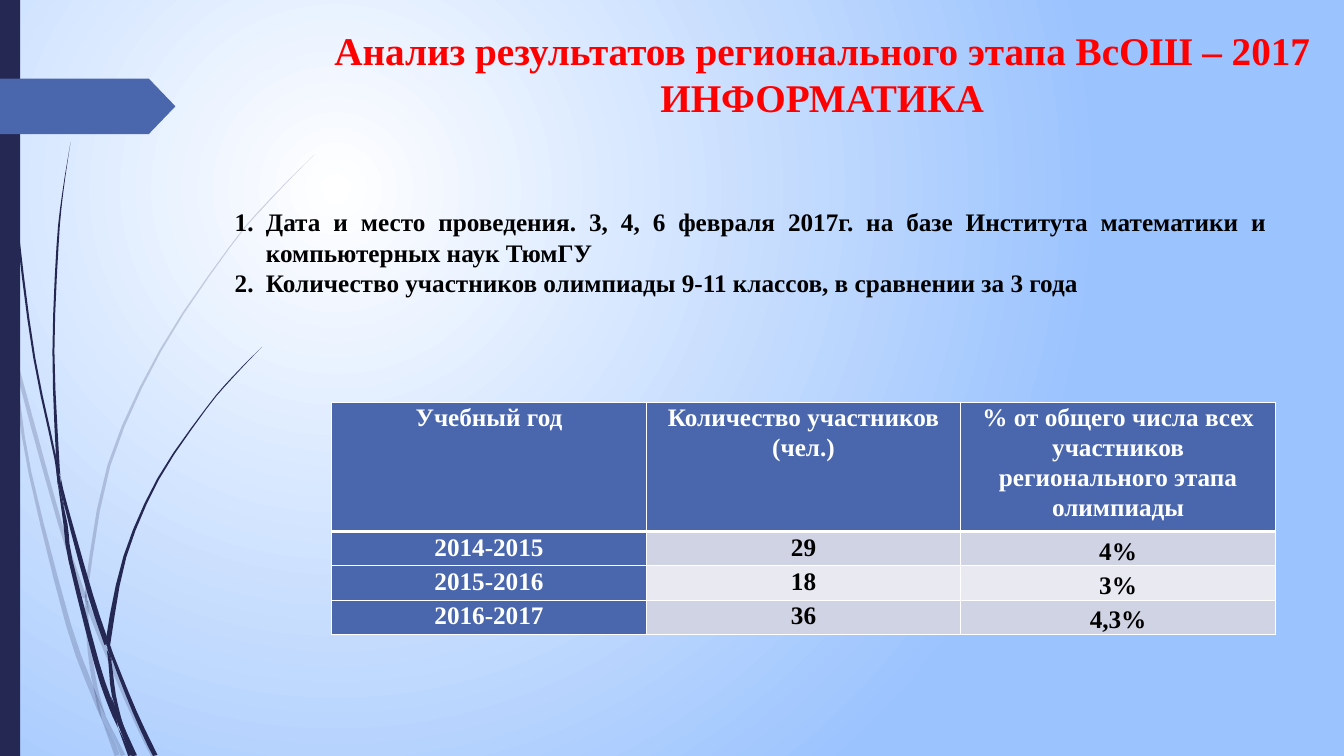
import math

import pptx
import pptx.dml.color
import pptx.enum.shapes
import pptx.enum.text
import pptx.oxml
import pptx.oxml.ns
import pptx.util

TITLE = ["Анализ результатов регионального этапа ВсОШ – 2017", "ИНФОРМАТИКА"]
POINTS = [
    "Дата и место проведения. 3, 4, 6 февраля 2017г. на базе Института "
    "математики и компьютерных наук ТюмГУ",
    "Количество участников олимпиады 9-11 классов, в сравнении за 3 года",
]
TABLE = [
    ["Учебный год", "Количество участников\n(чел.)",
     "% от общего числа всех участников регионального этапа\nолимпиады"],
    ["2014-2015", "29", "4%"],
    ["2015-2016", "18", "3%"],
    ["2016-2017", "36", "4,3%"],
]
# Each blade of grass runs through points (x, y, thickness) in inches.
PALE_BLADES = [
    [(0, 2.9, .05), (.06, 3.22, .03), (.11, 3.5, 0)],
    [(.14, 3.45, 0), (.22, 3.83, .04), (.6, 5.21, .04), (.84, 5.93, .04)],
    [(.88, 5.96, 0), (.9, 6.08, .04), (1.25, 6.93, .04), (1.52, 7.5, .05)],
    [(1.05, 7.11, 0), (1.22, 7.5, .05)],
    [(.11, 3.5, 0), (.16, 3.8, .03), (.3, 4.7, .03), (.68, 6.2, .05),
     (.93, 6.89, .05), (1.01, 7.14, 0)],
    [(.84, 5.99, 0), (.86, 6.1, .03), (.89, 6.46, .04), (.95, 6.83, .04),
     (1.05, 7.11, 0)],
    [(3.12, 1.53, 0), (2.68, 1.98, .01), (2.28, 2.45, .01), (1.59, 3.48, .02),
     (1.08, 4.62, .03), (.86, 5.84, .03), (.88, 5.96, 0)],
    [(1.01, 7.14, 0), (1.16, 7.5, .05)],
    [(.85, 5.86, 0), (.86, 5.98, .03), (.88, 6.1, 0)],
    [(.93, 6.83, 0), (1.02, 7.1, .05), (1.19, 7.5, 0)],
]
DARK_BLADES = [
    [(.03, 0, .01), (.07, 1.1, .01), (.18, 2.33, .02), (.34, 3.55, .02),
     (.55, 4.55, .02), (.57, 4.81, 0)],
    [(.6, 4.72, 0), (.65, 5, .03), (.9, 5.91, .05), (1.06, 6.39, .05)],
    [(1.1, 6.41, 0), (1.12, 6.52, .03), (1.34, 7.07, .04), (1.54, 7.5, .05)],
    [(.57, 4.77, 0), (.65, 5.2, .04), (.7, 5.56, .04), (.96, 6.58, .05),
     (1.1, 7, .05), (1.17, 7.22, 0)],
    [(.7, 1.41, 0), (.62, 1.93, .01), (.57, 2.45, .02), (.53, 3.49, .02),
     (.57, 4.51, .03), (.6, 4.72, 0)],
    [(1.22, 7.19, 0), (1.34, 7.5, .04)],
    [(.55, 4.49, 0), (.58, 4.74, .03), (.64, 5.05, 0)],
    [(2.6, 3.44, 0), (2.31, 3.74, .01), (2.04, 4.06, .01), (1.57, 4.75, .02),
     (1.24, 5.52, .03), (1.08, 6.32, .05), (1.1, 6.41, 0)],
    [(1.17, 7.22, 0), (1.29, 7.5, .04)],
    [(1.06, 6.45, 0), (1.09, 6.56, .03), (1.13, 6.9, .04), (1.22, 7.19, 0)],
    [(1.06, 6.31, 0), (1.08, 6.43, .03), (1.11, 6.56, 0)],
    [(1.1, 6.91, 0), (1.19, 7.17, .05), (1.32, 7.5, .03)],
]
W, H = 13.33, 7.5
NAVY, BLUE, RED, WHITE, BLACK, SKY = (
    "242852", "4A66AC", "FF0000", "FFFFFF", "000000", "9BC3FE")
BANDS = ["D0D3E3", "E9EAF1"]
COL_W, HEAD_H, ROW_H = 3.12, 1.27, .34
FONT = "Times New Roman"
ALIGN = pptx.enum.text.PP_ALIGN
ANCHOR = pptx.enum.text.MSO_ANCHOR
SHAPE = pptx.enum.shapes.MSO_SHAPE
inch = pptx.util.Inches


def rgb(colour):
    return pptx.dml.color.RGBColor.from_string(colour)


def add_xml(parent, xml):
    head, rest = xml.split(" ", 1)
    parent.append(pptx.oxml.parse_xml(
        f"{head} {pptx.oxml.ns.nsdecls('a')} {rest}"))


def paint(shape, colour, alpha=None):
    shape.shadow.inherit = False
    shape.fill.solid()
    shape.fill.fore_color.rgb = rgb(colour)
    shape.line.fill.background()
    if alpha:
        solid = shape.fill.fore_color._xFill
        add_xml(solid[0], f'<a:alpha val="{alpha * 1000}"/>')


def write(tf, lines, size, colour, align, spacing=1.0):
    tf.text = "\n".join(lines)
    for p in tf.paragraphs:
        p.alignment, p.line_spacing = align, spacing
        p.space_before = p.space_after = pptx.util.Pt(0)
        for r in p.runs:
            r.font.name, r.font.size, r.font.bold = FONT, pptx.util.Pt(size), True
            r.font.color.rgb = rgb(colour)


def smooth(points, steps=3):
    """Catmull-Rom curve through the points, thickness included."""
    ends = [points[0], *points, points[-1]]
    curve = []
    for a, b, c, d in zip(ends, ends[1:], ends[2:], ends[3:]):
        for t in (i / steps for i in range(steps)):
            curve.append(tuple(
                .5 * (2 * q + (r - p) * t + (2 * p - 5 * q + 4 * r - s) * t ** 2
                      + (3 * q - p - 3 * r + s) * t ** 3)
                for p, q, r, s in zip(a, b, c, d)))
    return curve + [points[-1]]


def add_blade(s, points, alpha=None):
    curve = smooth(points) if len(points) > 2 else points
    left, right = [], []
    for i, (x, y, w) in enumerate(curve):
        before, after = curve[max(i - 1, 0)], curve[min(i + 1, len(curve) - 1)]
        dx, dy = after[0] - before[0], after[1] - before[1]
        k = w / 2 / math.hypot(dx, dy)
        for side, sign in ((left, 1), (right, -1)):
            side.append((inch(max(x + sign * dy * k, 0)),
                         inch(min(max(y - sign * dx * k, 0), H))))
    outline = left + right[::-1]
    builder = s.shapes.build_freeform(*outline[0])
    builder.add_line_segments(outline[1:], close=True)
    paint(builder.convert_to_shape(), NAVY, alpha)


def add_backdrop(s):
    fill = s.background.fill
    fill.gradient()
    for stop, colour in zip(fill.gradient_stops, (WHITE, SKY)):
        stop.color.rgb = rgb(colour)
    grad = s.background._cSld.find(".//" + pptx.oxml.ns.qn("a:gradFill"))
    grad.remove(grad.find(pptx.oxml.ns.qn("a:lin")))
    add_xml(grad, '<a:path path="circle"><a:fillToRect l="50000" t="50000" '
                  'r="100000" b="100000"/></a:path>')
    for blades, alpha in ((PALE_BLADES, 20), (DARK_BLADES, None)):
        for points in blades:
            add_blade(s, points, alpha)
    paint(s.shapes.add_shape(SHAPE.RECTANGLE, 0, 0, inch(.2), inch(H)), NAVY)
    pointer = s.shapes.add_shape(
        SHAPE.PENTAGON, 0, inch(.78), inch(1.74), inch(.55))
    pointer.adjustments[0] = .48
    paint(pointer, BLUE)


def add_title(s):
    title = s.shapes.title
    title.left, title.top, title.width, title.height = map(
        inch, (2.51, .21, 11.29, 1.04))
    tf = title.text_frame
    tf.auto_size = pptx.enum.text.MSO_AUTO_SIZE.NONE
    tf.vertical_anchor = ANCHOR.TOP
    write(tf, TITLE, 28, RED, ALIGN.CENTER)


def add_points(s):
    tf = s.shapes.add_textbox(
        *map(inch, (1.73, 2, 10.93, 1.01))).text_frame
    tf.word_wrap = True
    write(tf, POINTS, 18, BLACK, ALIGN.JUSTIFY)
    for p in tf.paragraphs:
        pPr = p._p.get_or_add_pPr()
        pPr.set("marL", str(inch(.81)))
        pPr.set("indent", str(inch(-.31)))
        add_xml(pPr, '<a:buFont typeface="+mj-lt"/>')
        add_xml(pPr, '<a:buAutoNum type="arabicPeriod"/>')


def add_results(s):
    rows, cols = len(TABLE), len(TABLE[0])
    table = s.shapes.add_table(
        rows, cols, inch(3.29), inch(3.99), inch(COL_W * cols),
        inch(HEAD_H + ROW_H * (rows - 1))).table
    for column in table.columns:
        column.width = inch(COL_W)
    for i, line in enumerate(TABLE):
        table.rows[i].height = inch(ROW_H if i else HEAD_H)
        for j, text in enumerate(line):
            cell = table.cell(i, j)
            header = i == 0 or j == 0
            write(cell.text_frame, text.split("\n"), 18,
                  WHITE if header else BLACK, ALIGN.CENTER, 1.07)
            cell.margin_left = cell.margin_right = inch(.07)
            cell.margin_top = cell.margin_bottom = 0
            last = i > 0 and j == cols - 1
            cell.vertical_anchor = ANCHOR.BOTTOM if last else ANCHOR.TOP
            tcPr = cell._tc.get_or_add_tcPr()
            for side in "LRTB":
                thick = (i, side) in ((0, "B"), (1, "T"))
                add_xml(tcPr, f'<a:ln{side} w="{12700 * (3 if thick else 1)}">'
                              f'<a:solidFill><a:srgbClr val="{WHITE}"/>'
                              f'</a:solidFill></a:ln{side}>')
            cell.fill.solid()
            cell.fill.fore_color.rgb = rgb(BLUE if header else BANDS[(i - 1) % 2])


prs = pptx.Presentation()
prs.slide_width, prs.slide_height = inch(W), inch(H)
s = prs.slides.add_slide(prs.slide_layouts[5])
add_backdrop(s)
add_title(s)
add_points(s)
add_results(s)
prs.save("out.pptx")
